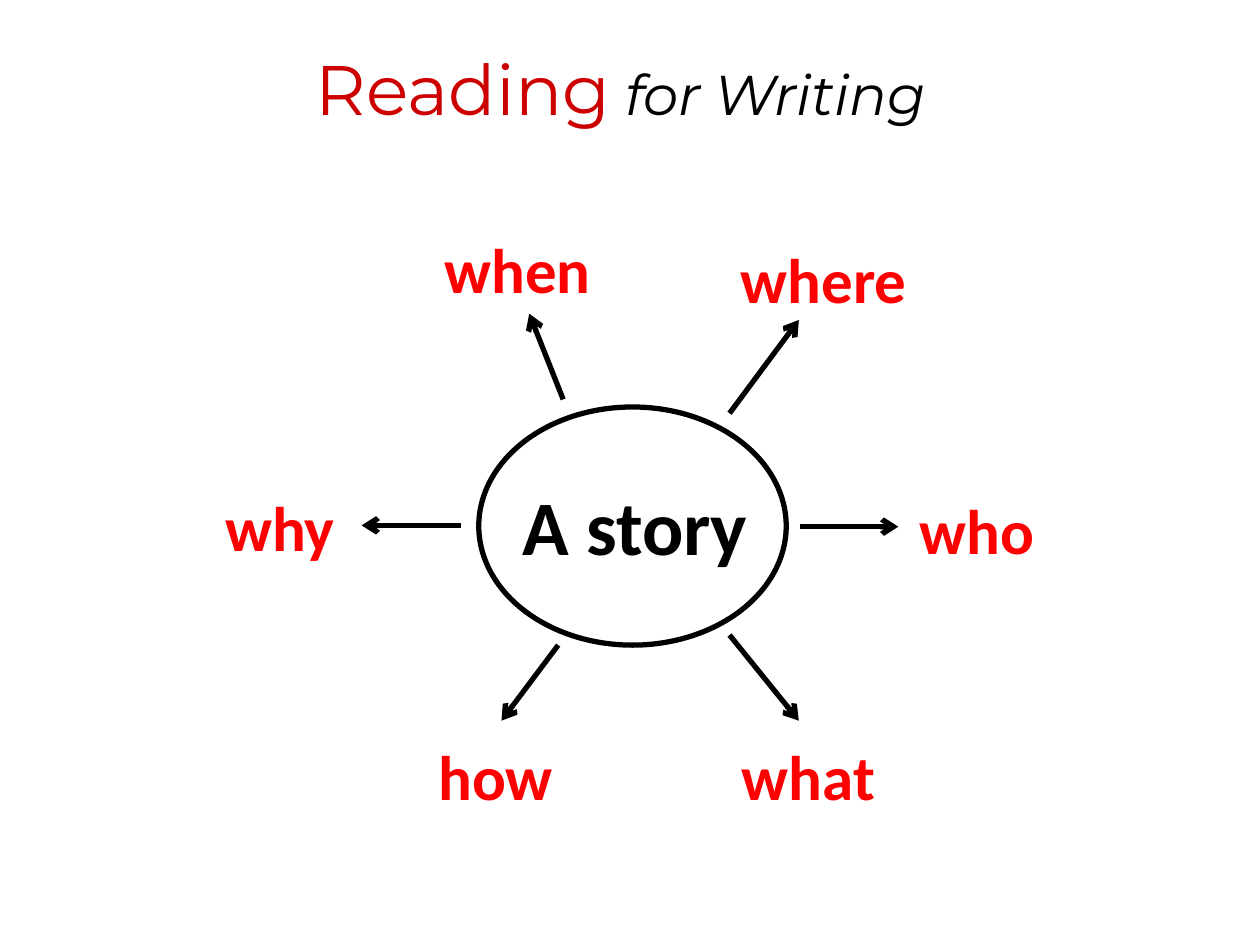
from dataclasses import dataclass

from lxml.etree import SubElement
from pptx import Presentation
from pptx.dml.color import RGBColor
from pptx.enum.shapes import MSO_CONNECTOR, MSO_SHAPE
from pptx.enum.text import MSO_AUTO_SIZE, PP_ALIGN
from pptx.oxml.ns import qn
from pptx.util import Inches, Pt


@dataclass(frozen=True)
class Theme:
    heading: str = "Montserrat"
    body: str = "Calibri"
    black: RGBColor = RGBColor(0, 0, 0)
    title_red: RGBColor = RGBColor(0xCC, 0, 0)
    word_red: RGBColor = RGBColor(0xFF, 0, 0)
    title: int = 40
    subtitle: int = 32
    gap: int = 28
    topic: int = 44
    word: int = 36
    line: int = 3


THEME = Theme()
CELL = 0.1  # inches; the slide is 100 columns by 75 rows
COLS, ROWS = 100, 75

# Word, label corner, arrow start, arrow end (column, row)
QUESTIONS = [
    ("when", (34.3, 17.8), (44.7, 31.7), (42.0, 24.9)),
    ("where", (57.8, 18.6), (57.9, 32.8), (63.4, 25.4)),
    ("who", (72.0, 38.5), (63.5, 41.8), (71.3, 41.8)),
    ("what", (57.9, 58.0), (57.9, 50.4), (63.4, 57.2)),
    ("how", (33.8, 58.0), (44.3, 51.2), (39.8, 57.2)),
    ("why", (16.9, 38.3), (36.6, 41.7), (28.7, 41.7)),
]
LABEL_SIZE = (18.2, 7.1)


def grid(*cells):
    return [Inches(cell * CELL) for cell in cells]


def add_text(s, box, runs, align=PP_ALIGN.LEFT):
    tf = s.shapes.add_textbox(*grid(*box)).text_frame
    tf.word_wrap = True
    tf.auto_size = MSO_AUTO_SIZE.SHAPE_TO_FIT_TEXT
    p = tf.paragraphs[0]
    p.alignment = align
    for text, color, style in runs:
        r = p.add_run()
        r.text = text
        r.font.color.rgb = color
        for name, value in style.items():
            setattr(r.font, name, value)


def set_line(line):
    line.color.rgb = THEME.black
    line.width = Pt(THEME.line)


def add_ellipse(s, box):
    sp = s.shapes.add_shape(MSO_SHAPE.OVAL, *grid(*box))
    sp.shadow.inherit = False
    sp.fill.background()
    set_line(sp.line)


def add_arrow(s, start, end):
    c = s.shapes.add_connector(MSO_CONNECTOR.STRAIGHT, *grid(*start, *end))
    set_line(c.line)
    SubElement(c.line._get_or_add_ln(), qn("a:tailEnd"), type="arrow")
    SubElement(c._element.spPr, qn("a:effectLst"))


def add_title(s):
    main = dict(name=THEME.heading, size=Pt(THEME.title))
    sub = dict(name=THEME.heading, size=Pt(THEME.subtitle))
    italic = dict(sub, italic=True)
    add_text(s, (24.1, 3.1, 53.4, 7.7), [
        ("Reading", THEME.title_red, main),
        (" ", THEME.black, sub),
        ("for", THEME.black, italic),
        (" ", THEME.black, dict(italic, size=Pt(THEME.gap))),
        ("Writing", THEME.black, italic),
    ])


def main():
    prs = Presentation()
    prs.slide_width, prs.slide_height = grid(COLS, ROWS)
    s = prs.slides.add_slide(prs.slide_layouts[6])
    bold = dict(name=THEME.body, bold=True)

    # Central topic
    topic = dict(bold, size=Pt(THEME.topic))
    add_text(s, (38.2, 37.5, 24.4, 8.3),
             [("A story", THEME.black, topic)], PP_ALIGN.CENTER)
    add_ellipse(s, (38, 32.3, 24.4, 18.9))

    # Question words around it
    word_style = dict(bold, size=Pt(THEME.word))
    for word, corner, start, end in QUESTIONS:
        add_arrow(s, start, end)
        add_text(s, (*corner, *LABEL_SIZE),
                 [(word, THEME.word_red, word_style)])

    # Title
    add_title(s)
    prs.save("out.pptx")


if __name__ == "__main__":
    main()
